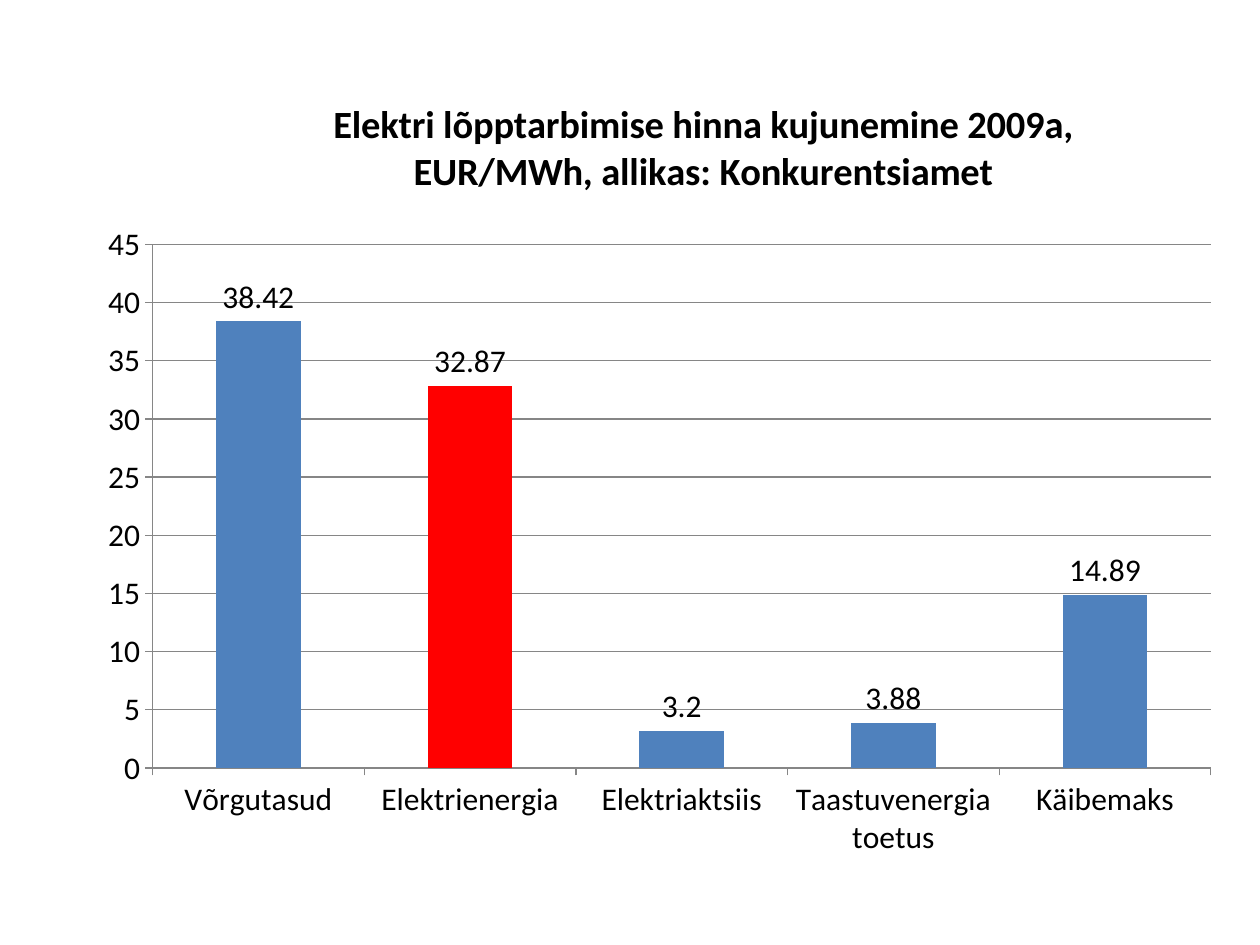
from lxml import etree
from pptx import Presentation
from pptx.chart.data import CategoryChartData
from pptx.dml.color import RGBColor
from pptx.enum import chart as ch
from pptx.oxml import parse_xml
from pptx.oxml.ns import nsdecls, qn
from pptx.util import Inches, Pt

BLACK = RGBColor(0x00, 0x00, 0x00)
GRAY = RGBColor(0x86, 0x86, 0x86)
BLUE = RGBColor(0x4F, 0x81, 0xBD)
RED = RGBColor(0xFF, 0x00, 0x00)

TITLE = "Elektri lõpptarbimise hinna kujunemine 2009a, EUR/MWh, allikas: Konkurentsiamet"
PRICES = {
    "Võrgutasud": 38.42,
    "Elektrienergia": 32.87,
    "Elektriaktsiis": 3.2,
    "Taastuvenergia toetus": 3.88,
    "Käibemaks": 14.89,
}
BODY = {"name": "Calibri", "size": Pt(18), "bold": False}
HEAD = {"name": "Calibri", "size": Pt(22), "bold": True}


def style(font, form):
    for key, val in form.items():
        setattr(font, key, val)
    font.color.rgb = BLACK


def layout(**parts):
    """Return a manual chart layout, in fractions of the chart's size."""
    node = parse_xml(f"<c:layout {nsdecls('c')}><c:manualLayout/></c:layout>")
    for key, val in parts.items():
        etree.SubElement(node[0], qn(f"c:{key}")).set("val", str(val))
    return node


def set_title(chart):
    chart.has_title = True
    title = chart.chart_title
    title.include_in_layout = False
    para = title.text_frame.paragraphs[0]
    run = para.add_run()
    run.text = TITLE
    style(run.font, HEAD)
    elem = title._element
    for old in elem.findall(qn("c:layout")):
        elem.remove(old)
    elem.find(qn("c:tx")).addnext(layout(xMode="edge", yMode="edge", x=0.18, y=0.03))


def set_axes(chart):
    for axis in (chart.category_axis, chart.value_axis):
        axis.major_tick_mark = ch.XL_TICK_MARK.OUTSIDE
        axis.minor_tick_mark = ch.XL_TICK_MARK.NONE
        axis.format.line.color.rgb = GRAY
        style(axis.tick_labels.font, BODY)
    axis = chart.value_axis
    axis.minimum_scale, axis.maximum_scale, axis.major_unit = 0, 45, 5
    axis.has_major_gridlines = True
    axis.major_gridlines.format.line.color.rgb = GRAY


def set_bars(plot):
    plot.gap_width = 150
    plot.vary_by_categories = False
    bars = plot.series[0]
    for part, color in ((bars, BLUE), (bars.points[1], RED)):
        part.format.fill.solid()
        part.format.fill.fore_color.rgb = color
    labels = bars.data_labels
    labels.show_value = True
    labels.position = ch.XL_LABEL_POSITION.OUTSIDE_END
    style(labels.font, BODY)


def price_chart(slide, left, top, width, height):
    data = CategoryChartData()
    data.categories = list(PRICES)
    data.add_series("Series 1", list(PRICES.values()))
    kind = ch.XL_CHART_TYPE.COLUMN_CLUSTERED
    chart = slide.shapes.add_chart(kind, left, top, width, height, data).chart
    style(chart.font, BODY)
    chart.has_legend = False
    set_title(chart)
    set_axes(chart)
    set_bars(chart.plots[0])
    area = chart._chartSpace.chart.plotArea
    for old in area.findall(qn("c:layout")):
        area.remove(old)
    area.insert(0, layout(layoutTarget="inner", xMode="edge", yMode="edge",
                          x=0.068, y=0.22, w=0.92, h=0.643))


def main():
    deck = Presentation()
    deck.slide_width, deck.slide_height = Inches(10), Inches(7.5)
    slide = deck.slides.add_slide(deck.slide_layouts[6])
    price_chart(slide, Inches(0.59), Inches(0.52), Inches(9.13), Inches(6.46))
    deck.save("out.pptx")


if __name__ == "__main__":
    main()
